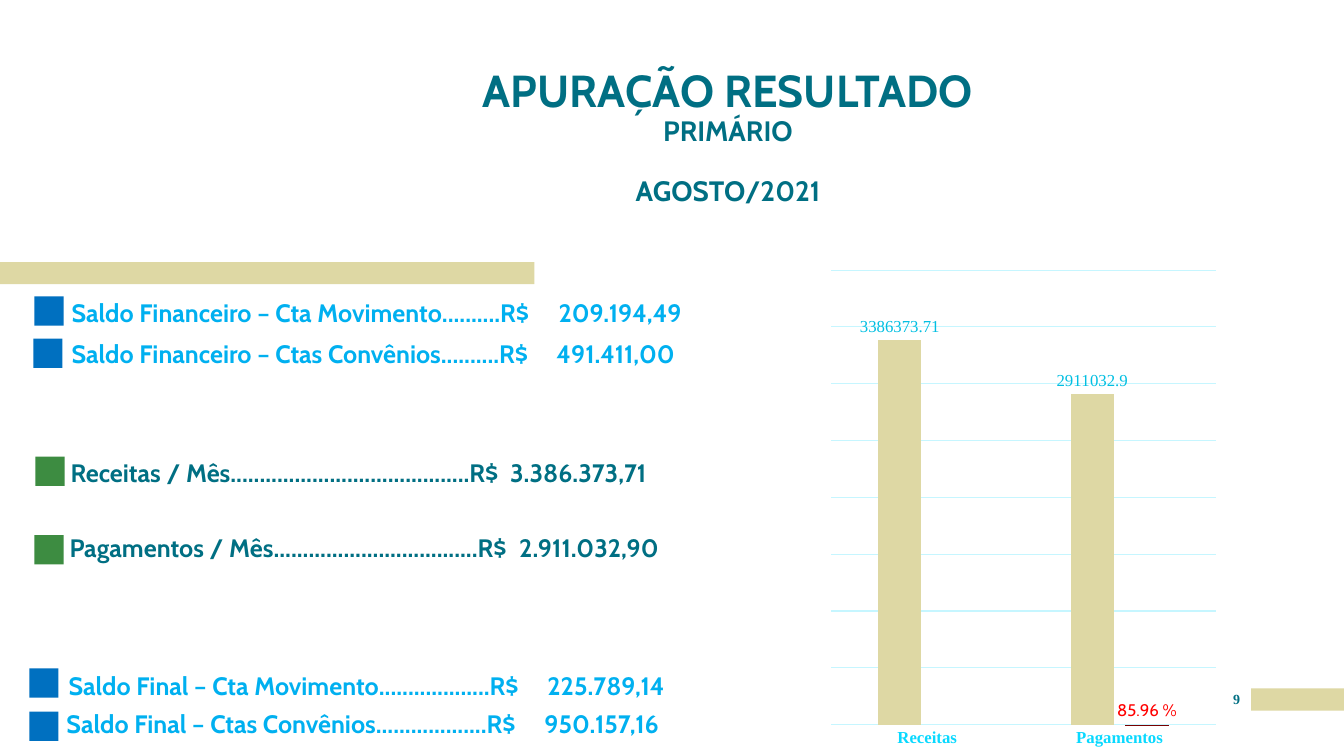
"""Build the slide with the primary result for August 2021."""
from lxml import etree
from pptx import Presentation
from pptx.chart.data import CategoryChartData
from pptx.dml.color import RGBColor
from pptx.enum import chart as charts, shapes, text
from pptx.oxml.ns import qn
from pptx.util import Inches, Pt

SAND, TEAL, SKY, BLUE, GREEN = "DED8A4", "006F83", "00B0F0", "0070C0", "3D8C41"
GRID, SERIF, SANS = "C6F6FF", "Times New Roman", "Cabin"


def style(font, size, color, name=SANS, bold=True):
    values = {"size": Pt(size), "name": name, "bold": bold}
    for key, value in values.items():
        setattr(font, key, value)
    font.color.rgb = RGBColor.from_string(color)


def add_block(left, top, width, height, color):
    block = page.shapes.add_shape(
        shapes.MSO_SHAPE.RECTANGLE, Inches(left), Inches(top), Inches(width), Inches(height))
    block.shadow.inherit = False
    block.fill.solid()
    block.fill.fore_color.rgb = RGBColor.from_string(color)
    block.line.fill.background()


deck = Presentation()
deck.slide_width, deck.slide_height = Inches(13.33), Inches(7.5)
page = deck.slides.add_slide(deck.slide_layouts[5])

add_block(12.41, 6.83, 0.92, 0.22, SAND)
add_block(0, 2.6, 5.3, 0.22, SAND)

title = page.shapes.title
title.left, title.top, title.width, title.height = (
    Inches(value) for value in (4.05, 0.11, 6.34, 2.25))
frame_format = {
    "margin_left": 0, "margin_right": 0, "margin_top": 0, "margin_bottom": 0,
    "word_wrap": True, "auto_size": text.MSO_AUTO_SIZE.NONE,
    "vertical_anchor": text.MSO_ANCHOR.BOTTOM,
}
for key, value in frame_format.items():
    setattr(title.text_frame, key, value)
title.text_frame.margin_bottom = Inches(0.3)
heading = [("APURAÇÃO RESULTADO", 32, 0), ("PRIMÁRIO", 20, 0), ("AGOSTO/2021", 20, 21.5)]
title.text_frame.text = "\n".join(words for words, size, gap in heading)
for para, (words, size, gap) in zip(title.text_frame.paragraphs, heading):
    para.alignment = text.PP_ALIGN.CENTER
    para.line_spacing = 0.9
    para.space_before = Pt(gap)
    style(para.runs[0].font, size, TEAL)

balances = [
    (0.34, 2.94, BLUE, 0.71, 2.87, 0.38, SKY,
     "Saldo Financeiro – Cta Movimento..........R$", 4.83, "209.194,49"),
    (0.33, 3.36, BLUE, 0.71, 3.28, 0.38, SKY,
     "Saldo Financeiro – Ctas Convênios..........R$", 4.81, "491.411,00"),
    (0.35, 4.53, GREEN, 0.7, 4.46, 0.38, TEAL,
     "Receitas / Mês.........................................R$", 4.36, "3.386.373,71"),
    (0.34, 5.31, GREEN, 0.69, 5.2, 0.38, TEAL,
     "Pagamentos / Mês...................................R$", 4.46, "2.911.032,90"),
    (0.29, 6.63, BLUE, 0.68, 6.5, 0.45, SKY,
     "Saldo Final – Cta Movimento...................R$", 4.75, "225.789,14"),
    (0.29, 7.06, BLUE, 0.66, 6.95, 0.38, SKY,
     "Saldo Final – Ctas Convênios...................R$", 4.74, "950.157,16"),
]
for mark_left, mark_top, mark, left, top, height, color, label, stop, amount in balances:
    add_block(mark_left, mark_top, 0.29, 0.29, mark)
    box = page.shapes.add_textbox(Inches(left), Inches(top), Inches(7.6), Inches(height))
    for key, value in frame_format.items():
        setattr(box.text_frame, key, value)
    para = box.text_frame.paragraphs[0]
    para.line_spacing = 0.9
    para.space_before = Pt(6)
    span = para.add_run()
    span.text = f"{label}\t{amount}"
    style(span.font, 18, color)
    tabs = etree.SubElement(para._p.get_or_add_pPr(), qn("a:tabLst"))
    etree.SubElement(tabs, qn("a:tab"), pos=str(Inches(stop)), algn="l")

figures = CategoryChartData()
figures.categories = ["Receitas", "Pagamentos"]
figures.add_series("Series 1", (3386373.71, 2911032.9))
figures.add_series("Series 2", (None, 85.96))
chart = page.shapes.add_chart(
    charts.XL_CHART_TYPE.COLUMN_CLUSTERED,
    Inches(7.44), Inches(2.51), Inches(4.93), Inches(4.99), figures).chart
chart.has_legend = chart.has_title = False
style(chart.font, 10, TEAL, SERIF, False)

amounts = chart.value_axis
amounts.minimum_scale, amounts.maximum_scale, amounts.major_unit = 0, 4000000, 500000
amounts.has_major_gridlines = True
amounts.visible = False
names = chart.category_axis
names.major_tick_mark = charts.XL_TICK_MARK.NONE
style(names.tick_labels.font, 12, "09D9FF", SERIF)
for line in (amounts.major_gridlines.format.line, names.format.line):
    line.width = Pt(0.75)
    line.color.rgb = RGBColor.from_string(GRID)

plot = chart.plots[0]
plot.gap_width, plot.overlap, plot.vary_by_categories = 219, -27, False
looks = [(SAND, "00BFE2", SERIF, "General"), ("790000", "FF0000", SANS, "0.00")]
for series, (fill, color, font, number_format) in zip(plot.series, looks):
    series.format.fill.solid()
    series.format.fill.fore_color.rgb = RGBColor.from_string(fill)
    labels = series.data_labels
    labels.show_value = True
    labels.number_format, labels.number_format_is_linked = number_format, False
    labels.position = charts.XL_LABEL_POSITION.OUTSIDE_END
    style(labels.font, 12, color, font, False)
share = plot.series[1].points[1].data_label
share.position = charts.XL_LABEL_POSITION.OUTSIDE_END
span = share.text_frame.paragraphs[0].add_run()
span.text = "85.96 %"
style(span.font, 12, "FF0000", SANS, False)

area = chart._chartSpace.chart.plotArea
for old in area.findall(qn("c:layout")):
    area.remove(old)
layout = etree.Element(qn("c:layout"))
area.insert(0, layout)
manual = etree.SubElement(layout, qn("c:manualLayout"))
for key, value in [("layoutTarget", "inner"), ("xMode", "edge"), ("yMode", "edge"),
                   ("x", "0.163"), ("y", "0.034"), ("w", "0.774"), ("h", "0.904")]:
    etree.SubElement(manual, qn(f"c:{key}"), val=value)

number = page.shapes.add_textbox(Inches(12.12), Inches(6.85), Inches(0.29), Inches(0.25))
for key, value in frame_format.items():
    setattr(number.text_frame, key, value)
number.text_frame.vertical_anchor = text.MSO_ANCHOR.TOP
para = number.text_frame.paragraphs[0]
para.alignment = text.PP_ALIGN.CENTER
span = para.add_run()
span.text = "9"
style(span.font, 10, TEAL, SERIF)

deck.save("out.pptx")
